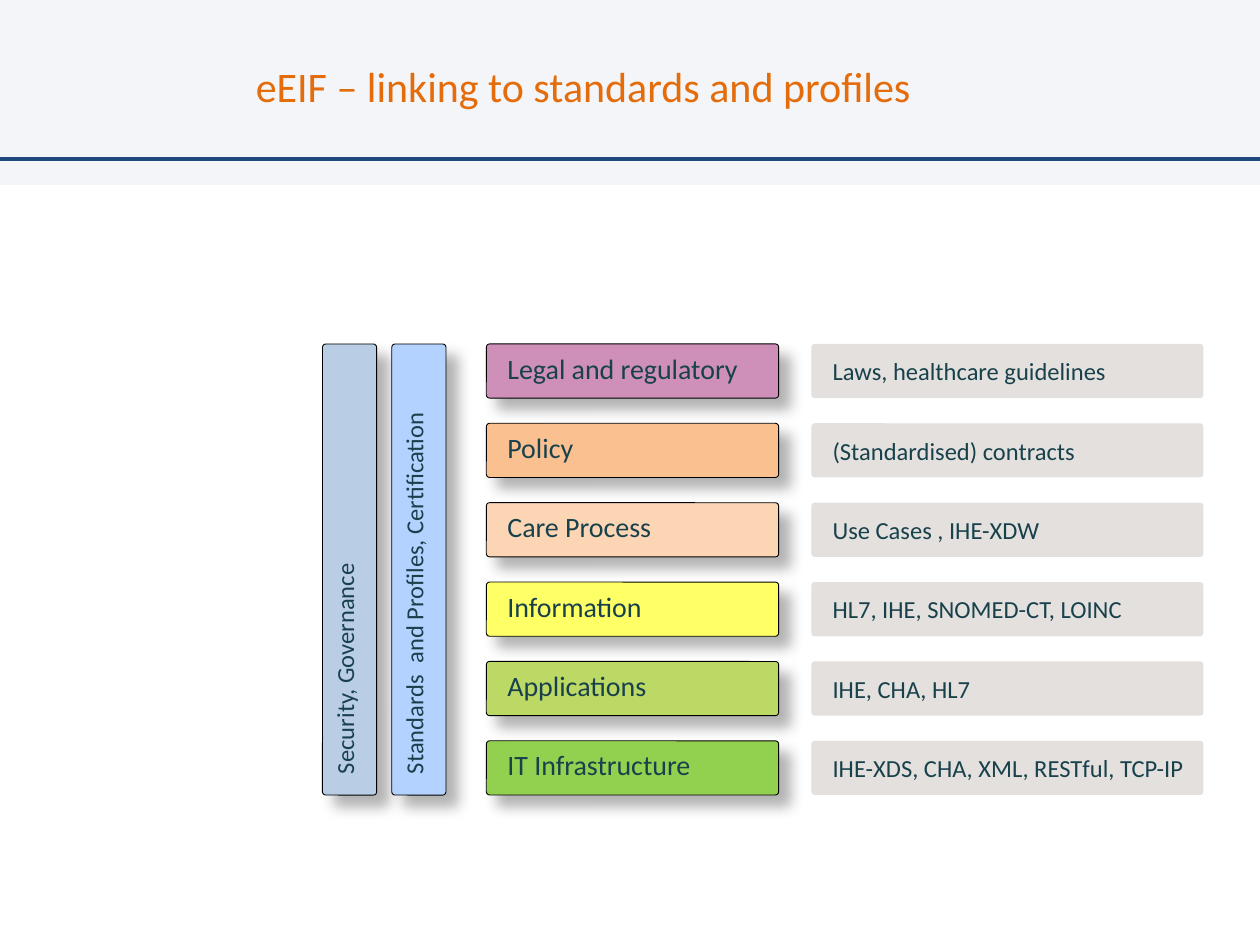
"""Build a slide that links the eEIF interoperability layers to standards and profiles."""
from lxml import etree
from pptx import Presentation, util as u
from pptx.dml.color import RGBColor
from pptx.enum import shapes, text
from pptx.oxml.ns import qn

COLORS = {
    "background": "F3F5F9", "rule": "1F497D", "panel": "FFFFFF",
    "title": "E46C0A", "text": "18414C", "outline": "000000",
    "standard": "E3E0DD", "governance": "B9CDE5", "certification": "B3D2FF",
    "legal": "CE90B8", "policy": "FAC090", "care": "FCD5B5",
    "information": "FFFF66", "applications": "BDD965", "infrastructure": "92D050",
}
LAYERS = [
    ("Legal and regulatory", "legal", "Laws, healthcare guidelines"),
    ("Policy", "policy", "(Standardised) contracts"),
    ("Care Process", "care", "Use Cases , IHE-XDW"),
    ("Information", "information", "HL7, IHE, SNOMED-CT, LOINC"),
    ("Applications", "applications", "IHE, CHA, HL7"),
    ("IT Infrastructure", "infrastructure", "IHE-XDS, CHA, XML, RESTful, TCP-IP"),
]
PILLARS = [
    ("Security, Governance", "governance", 2.56),
    ("Standards  and Profiles, Certification", "certification", 3.11),
]
WIDTH, HEIGHT = 10, 7.5
TOP, PITCH, BAR = 2.73, 0.63, 0.43
STACK = PITCH * (len(LAYERS) - 1) + BAR
LAYER_COL, STANDARD_COL = (3.86, 2.32), (6.44, 3.11)


def rgb(name):
    """Return the named colour."""
    return RGBColor.from_string(COLORS[name])


def place(sp, left, top, width, height):
    """Set the position and size of a shape in inches."""
    sp.left, sp.top, sp.width, sp.height = map(u.Inches, (left, top, width, height))


def add_run(p, words, size, color):
    """Add one formatted run to a left-aligned paragraph."""
    p.alignment = text.PP_ALIGN.LEFT
    r = p.add_run()
    r.text = words
    r.font.name, r.font.size = "Calibri", u.Pt(size)
    r.font.color.rgb = rgb(color)


def add_title(s, words):
    """Fill and move the title placeholder."""
    sp = s.shapes.title
    place(sp, 1.93, 0.21, 5.67, 0.94)
    tf = sp.text_frame
    tf.vertical_anchor = text.MSO_ANCHOR.MIDDLE
    add_run(tf.paragraphs[0], words, 24, "title")


def add_frame(s):
    """Add the header rule and the white content panel."""
    line = s.shapes.add_connector(shapes.MSO_CONNECTOR.STRAIGHT, u.Inches(WIDTH),
                                  u.Inches(1.26), 0, u.Inches(1.26))
    line.line.color.rgb, line.line.width = rgb("rule"), u.Pt(2.25)
    etree.SubElement(line._element.spPr, qn("a:effectLst"))
    panel = s.shapes.add_shape(shapes.MSO_SHAPE.RECTANGLE, 0, u.Inches(1.47),
                               u.Inches(WIDTH), u.Inches(HEIGHT - 1.47))
    panel.shadow.inherit = False
    panel.fill.solid()
    panel.fill.fore_color.rgb = rgb("panel")
    panel.line.fill.background()


def add_shadow(sp):
    """Give a shape a soft shadow to the lower right."""
    effects = sp._element.spPr.find(qn("a:effectLst"))
    shadow = etree.SubElement(effects, qn("a:outerShdw"), blurRad=str(u.Pt(8)),
                              dist=str(u.Pt(9)), dir="2700000", algn="ctr",
                              rotWithShape="0")
    color = etree.SubElement(shadow, qn("a:srgbClr"), val=COLORS["outline"])
    etree.SubElement(color, qn("a:alpha"), val="30000")


def add_bar(s, box, words, size, fill, raised=True):
    """Add a rounded bar, outlined and shadowed when raised."""
    sp = s.shapes.add_shape(shapes.MSO_SHAPE.ROUNDED_RECTANGLE, *map(u.Inches, box))
    sp.adjustments[0] = 0.06
    sp.shadow.inherit = False
    sp.fill.solid()
    sp.fill.fore_color.rgb = rgb(fill)
    if raised:
        sp.line.color.rgb, sp.line.width = rgb("outline"), u.Pt(0.5)
        add_shadow(sp)
    else:
        sp.line.fill.background()
    tf = sp.text_frame
    tf.word_wrap = True
    tf.margin_left = u.Inches(0.16)
    tf.vertical_anchor = text.MSO_ANCHOR.TOP if raised else text.MSO_ANCHOR.MIDDLE
    add_run(tf.paragraphs[0], words, size, "text")
    return sp


def add_pillar(s, words, fill, left):
    """Add a bar turned upright beside the full stack of layers."""
    shift = (STACK - BAR) / 2
    sp = add_bar(s, (left - shift, TOP + shift, STACK, BAR), words, 14, fill)
    sp.rotation = 270


def main():
    """Build and save the slide."""
    prs = Presentation()
    prs.slide_width, prs.slide_height = u.Inches(WIDTH), u.Inches(HEIGHT)
    s = prs.slides.add_slide(prs.slide_layouts[5])
    s.background.fill.solid()
    s.background.fill.fore_color.rgb = rgb("background")
    add_frame(s)
    add_title(s, "eEIF – linking to standards and profiles")
    for pillar in PILLARS:
        add_pillar(s, *pillar)
    for row, (layer, fill, standards) in enumerate(LAYERS):
        top = TOP + row * PITCH
        add_bar(s, (LAYER_COL[0], top, LAYER_COL[1], BAR), layer, 16, fill)
        add_bar(s, (STANDARD_COL[0], top, STANDARD_COL[1], BAR), standards, 14,
                "standard", raised=False)
    prs.save("out.pptx")


if __name__ == "__main__":
    main()
